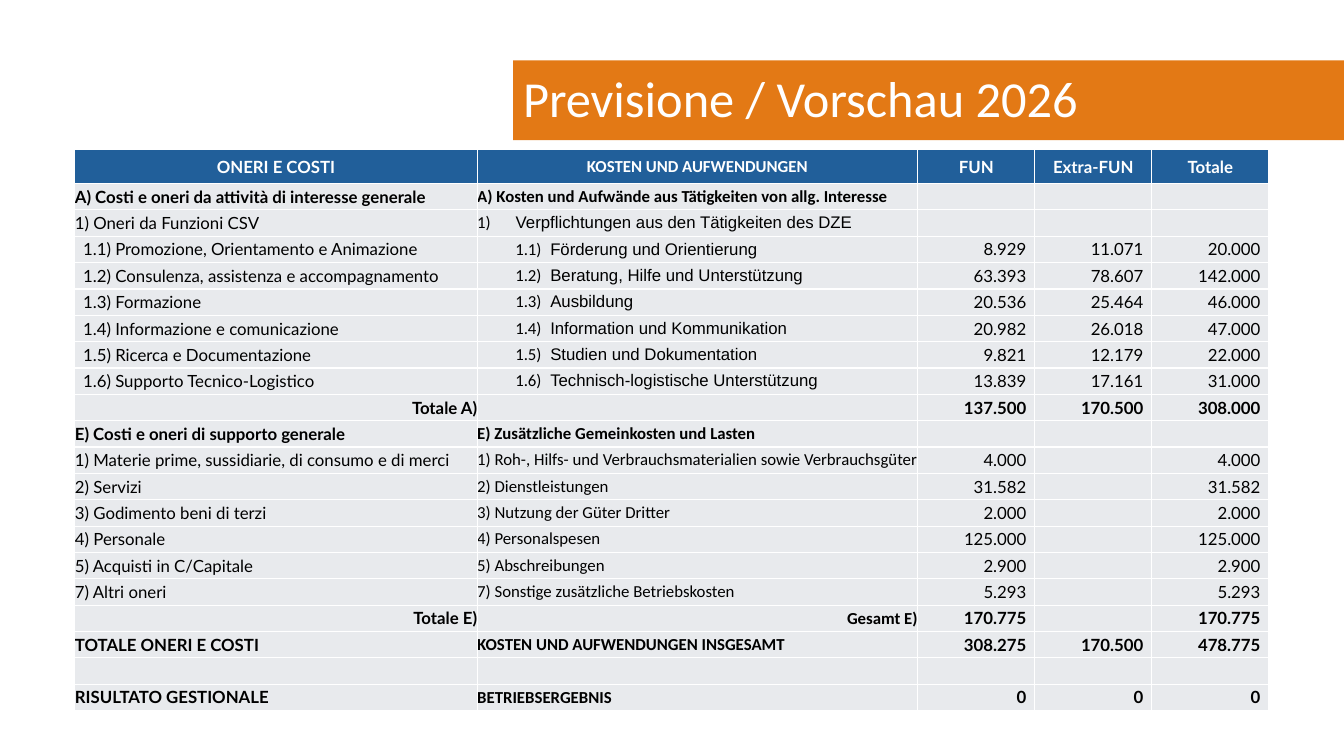
from dataclasses import dataclass
from enum import Enum
from typing import Optional

from lxml import etree
from pptx import Presentation
from pptx import util as u
from pptx.dml.color import RGBColor
from pptx.enum import shapes, text
from pptx.oxml import ns


@dataclass(frozen=True)
class Theme:
    orange: str = "E37915"
    blue: str = "215F9A"
    grey: str = "E8EAED"
    white: str = "FFFFFF"
    black: str = "000000"
    italian_font: str = "Lato"
    german_font: str = "Calibri"
    item_font: str = "Arial"
    title_size: float = 36
    table_size: float = 12
    border: float = 1


class Kind(Enum):
    HEADER = "header"
    SECTION = "section"
    ITEM = "item"
    FUNCTIONS = "functions"
    SUBITEM = "subitem"
    SUBTOTAL = "subtotal"
    TOTAL = "total"


@dataclass(frozen=True)
class BudgetRow:
    kind: Kind
    italian: str = ""
    german: str = ""
    amounts: tuple[str, str, str] = ("", "", "")


THEME = Theme()
LEFT, CENTER, RIGHT = text.PP_ALIGN.LEFT, text.PP_ALIGN.CENTER, text.PP_ALIGN.RIGHT
SLIDE_WIDTH, SLIDE_HEIGHT = 960, 540
BANNER_LEFT = 366.5
TABLE_LEFT, TABLE_TOP = 53.5, 106.8
COLUMN_WIDTHS = (287.4, 314.7, 83.6, 83.6, 83.6)
HEADER_HEIGHT, ROW_HEIGHT = 24.3, 18.85
ITALIAN_INDENT, GERMAN_INDENT, AMOUNT_MARGIN = 5.9, 27.2, 6
LABEL_TABS = {Kind.FUNCTIONS: 27.5, Kind.SUBITEM: 25}

ROWS = (
    BudgetRow(Kind.HEADER, "ONERI E COSTI", "KOSTEN UND AUFWENDUNGEN", ("FUN", "Extra-FUN", "Totale")),
    BudgetRow(Kind.SECTION, "A) Costi e oneri da attività di interesse generale",
              "A) Kosten und Aufwände aus Tätigkeiten von allg. Interesse"),
    BudgetRow(Kind.FUNCTIONS, "1) Oneri da Funzioni CSV", "1) Verpflichtungen aus den Tätigkeiten des DZE"),
    BudgetRow(Kind.SUBITEM, "1.1) Promozione, Orientamento e Animazione",
              "1.1) Förderung und Orientierung", ("8.929", "11.071", "20.000")),
    BudgetRow(Kind.SUBITEM, "1.2) Consulenza, assistenza e accompagnamento",
              "1.2) Beratung, Hilfe und Unterstützung", ("63.393", "78.607", "142.000")),
    BudgetRow(Kind.SUBITEM, "1.3) Formazione", "1.3) Ausbildung", ("20.536", "25.464", "46.000")),
    BudgetRow(Kind.SUBITEM, "1.4) Informazione e comunicazione",
              "1.4) Information und Kommunikation", ("20.982", "26.018", "47.000")),
    BudgetRow(Kind.SUBITEM, "1.5) Ricerca e Documentazione",
              "1.5) Studien und Dokumentation", ("9.821", "12.179", "22.000")),
    BudgetRow(Kind.SUBITEM, "1.6) Supporto Tecnico-Logistico",
              "1.6) Technisch-logistische Unterstützung", ("13.839", "17.161", "31.000")),
    BudgetRow(Kind.SUBTOTAL, "Totale A)", "", ("137.500", "170.500", "308.000")),
    BudgetRow(Kind.SECTION, "E) Costi e oneri di supporto generale", "E) Zusätzliche Gemeinkosten und Lasten"),
    BudgetRow(Kind.ITEM, "1) Materie prime, sussidiarie, di consumo e di merci",
              "1) Roh-, Hilfs- und Verbrauchsmaterialien sowie Verbrauchsgüter", ("4.000", "", "4.000")),
    BudgetRow(Kind.ITEM, "2) Servizi", "2) Dienstleistungen", ("31.582", "", "31.582")),
    BudgetRow(Kind.ITEM, "3) Godimento beni di terzi", "3) Nutzung der Güter Dritter", ("2.000", "", "2.000")),
    BudgetRow(Kind.ITEM, "4) Personale", "4) Personalspesen", ("125.000", "", "125.000")),
    BudgetRow(Kind.ITEM, "5) Acquisti in C/Capitale", "5) Abschreibungen", ("2.900", "", "2.900")),
    BudgetRow(Kind.ITEM, "7) Altri oneri", "7) Sonstige zusätzliche Betriebskosten", ("5.293", "", "5.293")),
    BudgetRow(Kind.SUBTOTAL, "Totale E)", "Gesamt E)", ("170.775", "", "170.775")),
    BudgetRow(Kind.TOTAL, "TOTALE ONERI E COSTI", "KOSTEN UND AUFWENDUNGEN INSGESAMT",
              ("308.275", "170.500", "478.775")),
    BudgetRow(Kind.ITEM),
    BudgetRow(Kind.TOTAL, "RISULTATO GESTIONALE", "BETRIEBSERGEBNIS", ("0", "0", "0")),
)


def add_text(paragraph, words: str, *, font: str, size: float = THEME.table_size,
             color: str = THEME.black, bold: bool = False, align=LEFT) -> None:
    """Append a run; an empty paragraph only keeps the type size."""
    paragraph.alignment = align
    if not words:
        etree.SubElement(paragraph._p, ns.qn("a:endParaRPr"), sz=str(int(size * 100)))
        return
    run = paragraph.add_run()
    run.text = words
    run.font.name = font
    run.font.size = u.Pt(size)
    run.font.bold = bold
    run.font.color.rgb = RGBColor.from_string(color)


def add_tab_stop(paragraph, position: float) -> None:
    tabs = etree.SubElement(paragraph._p.get_or_add_pPr(), ns.qn("a:tabLst"))
    etree.SubElement(tabs, ns.qn("a:tab"), pos=str(u.Pt(position)), algn="l")


def style_cell(cell, fill: str, *, left: float = 0, right: float = 0) -> None:
    cell.margin_left, cell.margin_right = u.Pt(left), u.Pt(right)
    cell.margin_top = cell.margin_bottom = u.Pt(0)
    cell.vertical_anchor = text.MSO_ANCHOR.MIDDLE
    properties = cell._tc.get_or_add_tcPr()
    for side in ("lnL", "lnR", "lnT", "lnB"):
        line = etree.SubElement(properties, ns.qn(f"a:{side}"), w=str(u.Pt(THEME.border)))
        line_fill = etree.SubElement(line, ns.qn("a:solidFill"))
        etree.SubElement(line_fill, ns.qn("a:srgbClr"), val=THEME.white)
    cell.fill.solid()
    cell.fill.fore_color.rgb = RGBColor.from_string(fill)


def fill_row(cells, row: BudgetRow) -> None:
    header, subitem = row.kind is Kind.HEADER, row.kind is Kind.SUBITEM
    fill = THEME.blue if header else THEME.grey
    color = THEME.white if header else THEME.black
    bold = row.kind in (Kind.HEADER, Kind.SECTION, Kind.SUBTOTAL, Kind.TOTAL)
    label_align = CENTER if header else RIGHT if row.kind is Kind.SUBTOTAL else LEFT
    label_tab: Optional[float] = LABEL_TABS.get(row.kind)
    italian, german, *amounts = cells

    # Italian label
    style_cell(italian, fill, left=ITALIAN_INDENT if subitem else 0)
    add_text(italian.text_frame.paragraphs[0], row.italian, font=THEME.italian_font,
             color=color, bold=bold, align=label_align)

    # German label, with its number set apart by a tab where it has one
    style_cell(german, fill, left=GERMAN_INDENT if subitem else 0)
    paragraph = german.text_frame.paragraphs[0]
    if label_tab:
        number, words = row.german.split(" ", 1)
        add_tab_stop(paragraph, label_tab)
        add_text(paragraph, number + "\t", font=THEME.german_font)
        add_text(paragraph, words, font=THEME.item_font)
    else:
        add_text(paragraph, row.german, font=THEME.german_font, color=color, bold=bold, align=label_align)

    # Amounts
    for cell, amount in zip(amounts, row.amounts):
        style_cell(cell, fill, right=0 if header else AMOUNT_MARGIN)
        add_text(cell.text_frame.paragraphs[0], amount, font=THEME.italian_font,
                 color=color, bold=bold, align=CENTER if header else RIGHT)


def add_banner(slide) -> None:
    banner = slide.shapes.add_shape(shapes.MSO_SHAPE.RECTANGLE, u.Pt(BANNER_LEFT), u.Pt(43.2),
                                    u.Pt(SLIDE_WIDTH - BANNER_LEFT), u.Pt(56.9))
    banner.shadow.inherit = False
    banner.fill.solid()
    banner.fill.fore_color.rgb = RGBColor.from_string(THEME.orange)
    banner.line.fill.background()


def add_title(slide) -> None:
    title = slide.shapes.add_textbox(u.Pt(BANNER_LEFT), u.Pt(49), u.Pt(567.4), u.Pt(51.1))
    title.text_frame.word_wrap = True
    paragraph = title.text_frame.paragraphs[0]
    paragraph.line_spacing = 0.9
    add_text(paragraph, "Previsione / Vorschau 2026", font=THEME.german_font,
             size=THEME.title_size, color=THEME.white)


def add_budget_table(slide) -> None:
    height = HEADER_HEIGHT + ROW_HEIGHT * (len(ROWS) - 1)
    table = slide.shapes.add_table(len(ROWS), len(COLUMN_WIDTHS), u.Pt(TABLE_LEFT), u.Pt(TABLE_TOP),
                                   u.Pt(sum(COLUMN_WIDTHS)), u.Pt(height)).table
    table.first_row = table.horz_banding = False
    for column, width in zip(table.columns, COLUMN_WIDTHS):
        column.width = u.Pt(width)
    for table_row, row in zip(table.rows, ROWS):
        table_row.height = u.Pt(HEADER_HEIGHT if row.kind is Kind.HEADER else ROW_HEIGHT)
        fill_row(table_row.cells, row)


def main() -> None:
    presentation = Presentation()
    presentation.slide_width, presentation.slide_height = u.Pt(SLIDE_WIDTH), u.Pt(SLIDE_HEIGHT)
    slide = presentation.slides.add_slide(presentation.slide_layouts[6])
    add_banner(slide)
    add_budget_table(slide)
    add_title(slide)
    presentation.save("out.pptx")


if __name__ == "__main__":
    main()
